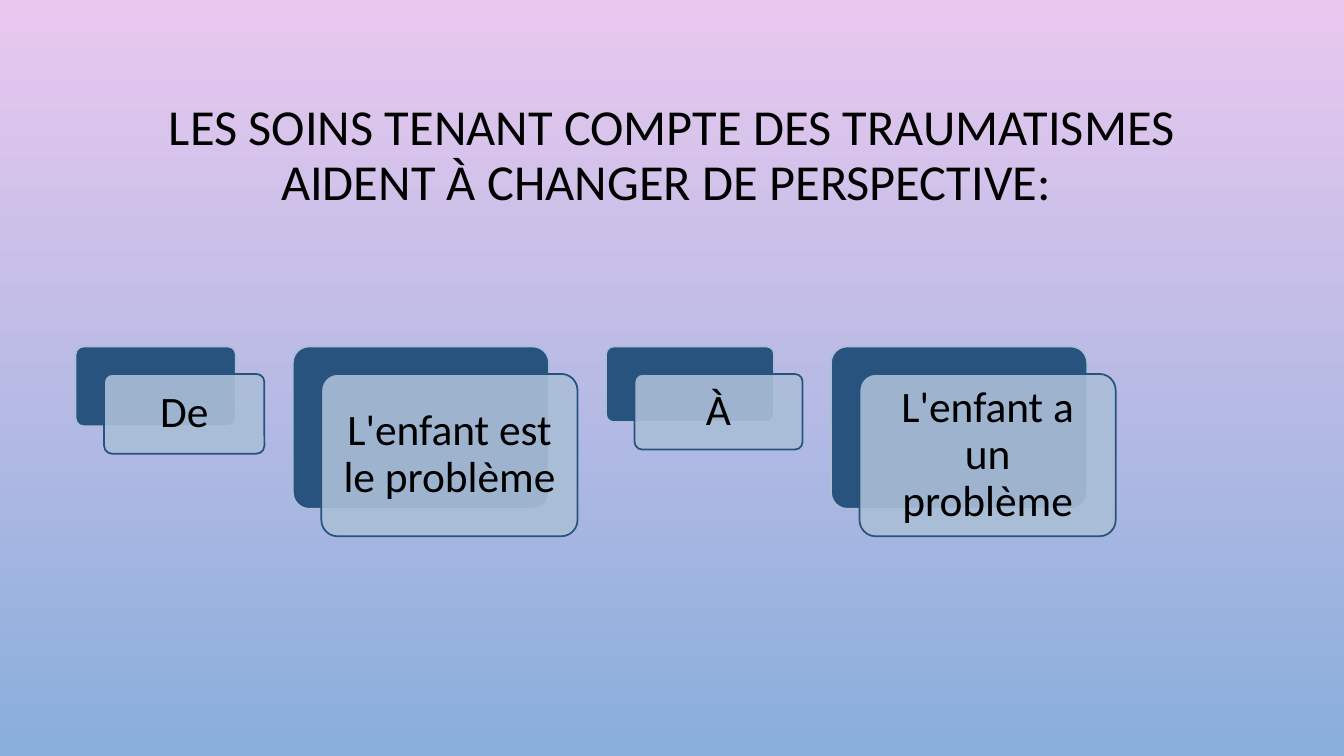
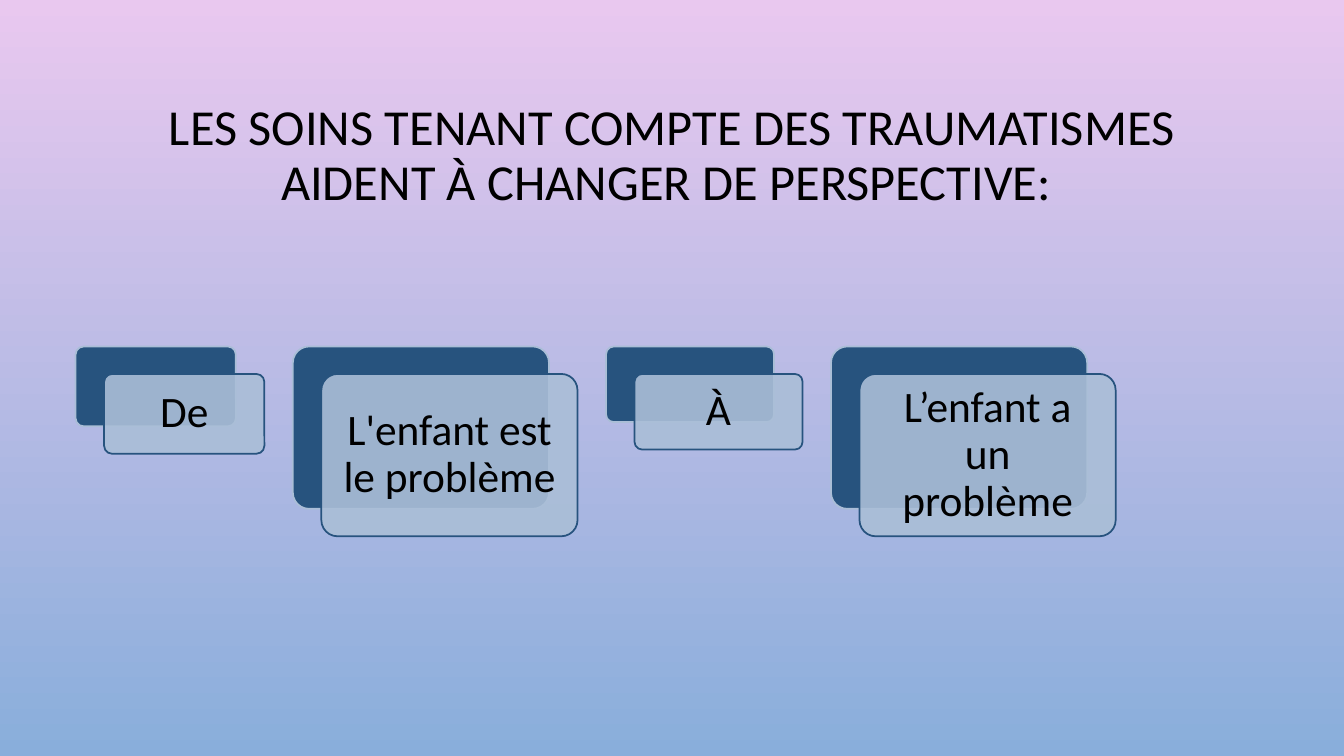
"""Builds two slides on the change of perspective brought by trauma-informed care."""
from lxml import etree
from pptx import Presentation
from pptx.dml.color import RGBColor
from pptx.enum import shapes, text
from pptx.oxml import ns
from pptx.util import Pt


def rgb(code):
    return RGBColor.from_string(code)


class Deck:
    FONT = "Calibri"
    INK, NAVY, MIST = "000000", "27537E", "AABED7"
    SKY = ("E9C8EF", "89AEDB")
    STEP_LEFT, STEP_TOP = 54, 247.5
    SHIFT_X, SHIFT_Y = 20.35, 19.6

    def __init__(self):
        self.prs = Presentation()
        self.prs.slide_width, self.prs.slide_height = Pt(960), Pt(540)
        self.slide = None

    def new_slide(self):
        self.slide = self.prs.slides.add_slide(self.prs.slide_layouts[6])
        fill = self.slide.background.fill
        fill.gradient()
        fill.gradient_angle = 270
        for stop, code in zip(fill.gradient_stops, self.SKY):
            stop.color.rgb = rgb(code)

    def label(self, shape, words, size, inset_x, inset_y):
        frame = shape.text_frame
        frame.word_wrap = True
        frame.vertical_anchor = text.MSO_ANCHOR.MIDDLE
        frame.margin_left = frame.margin_right = Pt(inset_x)
        frame.margin_top = frame.margin_bottom = Pt(inset_y)
        paragraph = frame.paragraphs[0]
        paragraph.text = words
        paragraph.alignment = text.PP_ALIGN.CENTER
        paragraph.line_spacing = 0.9
        paragraph.font.name = self.FONT
        paragraph.font.size = Pt(size)
        paragraph.font.color.rgb = rgb(self.INK)

    def title(self, words):
        heading = self.slide.shapes.add_textbox(Pt(72), Pt(49), Pt(816), Pt(126))
        self.label(heading, words, 36, 7.2, 3.6)

    def card(self, left, top, width, height, fill, line, opacity=100):
        card = self.slide.shapes.add_shape(
            shapes.MSO_SHAPE.ROUNDED_RECTANGLE, Pt(left), Pt(top), Pt(width), Pt(height))
        card.adjustments[0] = 0.1
        card.shadow.inherit = False
        card.fill.solid()
        card.fill.fore_color.rgb = rgb(fill)
        card.line.color.rgb = rgb(line)
        card.line.width = Pt(1.25)
        if opacity < 100:
            color = card.element.spPr.find(ns.qn("a:solidFill"))[0]
            etree.SubElement(color, ns.qn("a:alpha")).set("val", str(opacity * 1000))
        return card

    def steps(self, steps):
        left, top = self.STEP_LEFT, self.STEP_TOP
        for words, width, height in steps:
            self.card(left, top, width, height, self.NAVY, self.MIST)
            front = self.card(left + self.SHIFT_X, top + self.SHIFT_Y, width, height,
                              self.MIST, self.NAVY, 90)
            self.label(front, words, 31, 9.3, 9.3)
            left += width + 2 * self.SHIFT_X


def main():
    deck = Deck()
    for outcome in ("L'enfant a un problème", "L’enfant a un problème"):
        deck.new_slide()
        deck.title("LES SOINS TENANT COMPTE DES TRAUMATISMES AIDENT À CHANGER DE PERSPECTIVE: ")
        deck.steps([
            ("De", 114.5, 57),
            ("L'enfant est le problème", 183, 116),
            ("À", 120, 54),
            (outcome, 183, 116),
        ])
    deck.prs.save("out.pptx")


if __name__ == "__main__":
    main()
